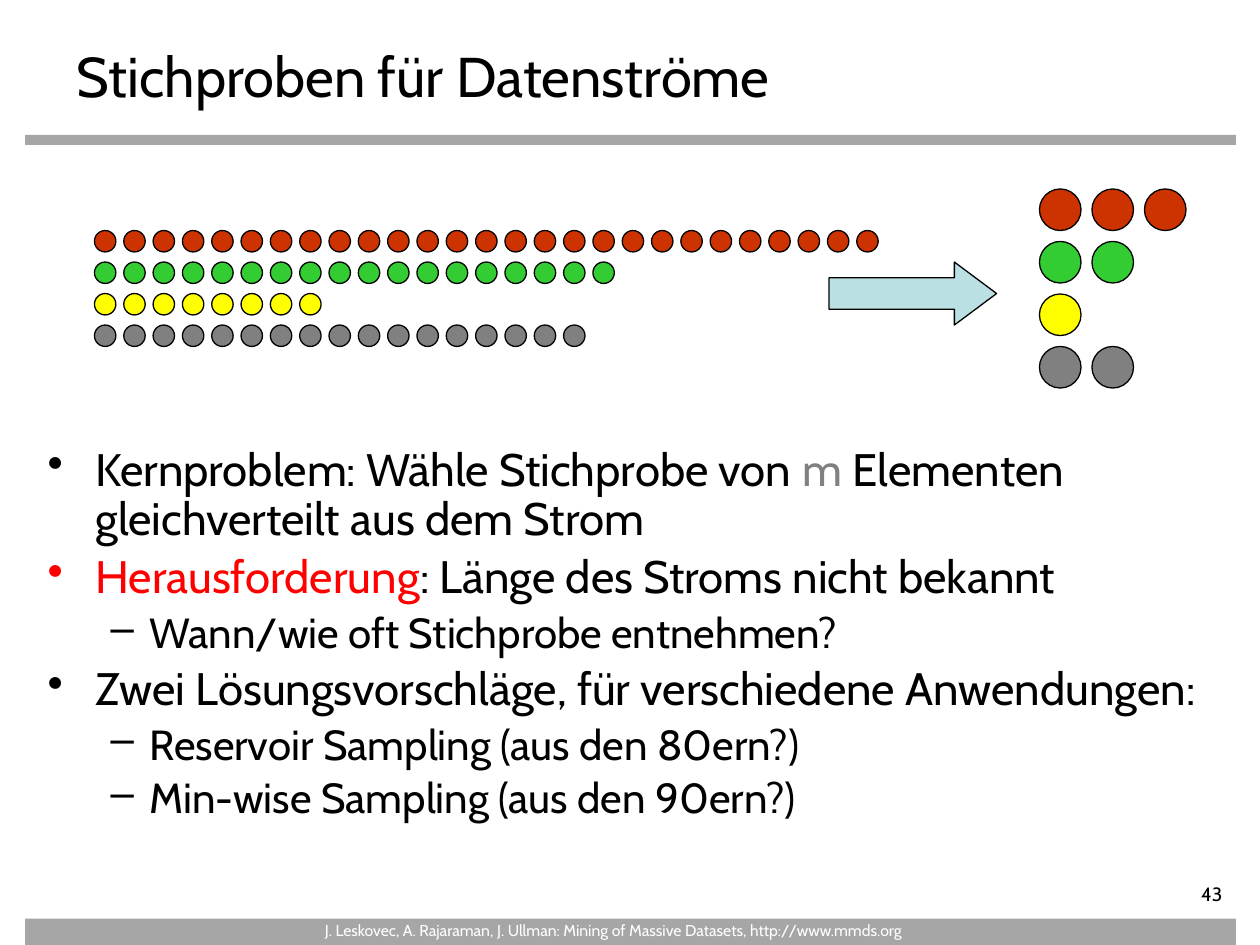
"""Build the slide on sampling from data streams."""
from lxml.etree import SubElement
from pptx import Presentation
from pptx.dml.color import RGBColor
from pptx.enum.shapes import MSO_SHAPE
from pptx.enum.text import PP_ALIGN
from pptx.oxml.ns import qn
from pptx.util import Inches, Pt


def add_figure(kind, left, top, width, height, color, outlined=True):
    figure = slide.shapes.add_shape(
        kind, Inches(left), Inches(top), Inches(width), Inches(height))
    figure.shadow.inherit = False
    figure.fill.solid()
    figure.fill.fore_color.rgb = RGBColor.from_string(color)
    if outlined:
        figure.line.color.rgb = RGBColor.from_string("000000")
        figure.line.width = Pt(0.75)
    else:
        figure.line.fill.background()
    return figure


def add_text(left, top, width, height, paragraphs):
    frame = slide.shapes.add_textbox(
        Inches(left), Inches(top), Inches(width), Inches(height)).text_frame
    frame.word_wrap = True
    for index, (size, runs) in enumerate(paragraphs):
        paragraph = frame.paragraphs[0] if index == 0 else frame.add_paragraph()
        for text, color in runs:
            run = paragraph.add_run()
            run.text = text
            run.font.name = "Cabin"
            run.font.size = Pt(size)
            run.font.color.rgb = RGBColor.from_string(color)
    return frame


prs = Presentation()
prs.slide_width = Inches(10)
prs.slide_height = Inches(7.5)
slide = prs.slides.add_slide(prs.slide_layouts[6])

for top, height in [(1.07, 0.08), (7.29, 0.21)]:
    add_figure(MSO_SHAPE.RECTANGLE, 0.2, top, 9.61, height, "A6A6A6", outlined=False)

add_text(0.51, 0.28, 9, 0.55, [(32, [("Stichproben für Datenströme", "000000")])])

points = [
    (0, [("Kernproblem: Wähle Stichprobe von ", "000000"), ("m ", "808080"),
         ("Elementen gleichverteilt aus dem Strom", "000000")]),
    (0, [("Herausforderung", "FF0000"), (": Länge des Stroms nicht bekannt", "000000")]),
    (1, [("Wann/wie oft Stichprobe entnehmen?", "000000")]),
    (0, [("Zwei Lösungsvorschläge, für verschiedene Anwendungen:", "000000")]),
    (1, [("Reservoir Sampling (aus den 80ern?)", "000000")]),
    (1, [("Min-wise Sampling (aus den 90ern?)", "000000")]),
]
levels = [(26, "•", 0.38, -0.38), (24, "–", 0.81, -0.31)]
body = add_text(0.28, 3.5, 9.47, 3.5, [(levels[level][0], runs) for level, runs in points])
for index, (paragraph, (level, runs)) in enumerate(zip(body.paragraphs, points)):
    size, bullet, margin, indent = levels[level]
    paragraph.level = level
    paragraph.line_spacing = 0.9
    if index:
        paragraph.space_before = Pt(size * 0.2)
    properties = paragraph._p.get_or_add_pPr()
    properties.set("marL", str(Inches(margin)))
    properties.set("indent", str(Inches(indent)))
    SubElement(properties, qn("a:buChar")).set("char", bullet)

stream_pitch = 6.05 / 26
sample_pitch = 1.25 / 3
categories = [("CC3300", 27, 3), ("33CC33", 18, 2), ("FFFF00", 8, 1), ("808080", 17, 2)]
for row, (color, stream_count, sample_count) in enumerate(categories):
    for column in range(stream_count):
        add_figure(MSO_SHAPE.OVAL, 0.75 + column * stream_pitch, 1.83 + row * 0.25,
                   0.17, 0.17, color)
    for column in range(sample_count):
        add_figure(MSO_SHAPE.OVAL, 8.25 + column * sample_pitch, 1.5 + row * sample_pitch,
                   0.33, 0.33, color)

sampling_arrow = add_figure(MSO_SHAPE.RIGHT_ARROW, 6.58, 2.08, 1.33, 0.5, "BBE0E3")
sampling_arrow.adjustments[0] = 0.5
sampling_arrow.adjustments[1] = 0.67

page_number = add_text(8.7, 7, 1.1, 0.22, [(11, [("43", "000000")])])
page_number.margin_left = page_number.margin_top = page_number.margin_bottom = 0
page_number.paragraphs[0].alignment = PP_ALIGN.RIGHT

add_text(2.48, 7.26, 5.2, 0.31, [(9, [(
    "J. Leskovec, A. Rajaraman, J. Ullman: Mining of Massive Datasets, http://www.mmds.org",
    "FFFFFF")])])

prs.save("out.pptx")
